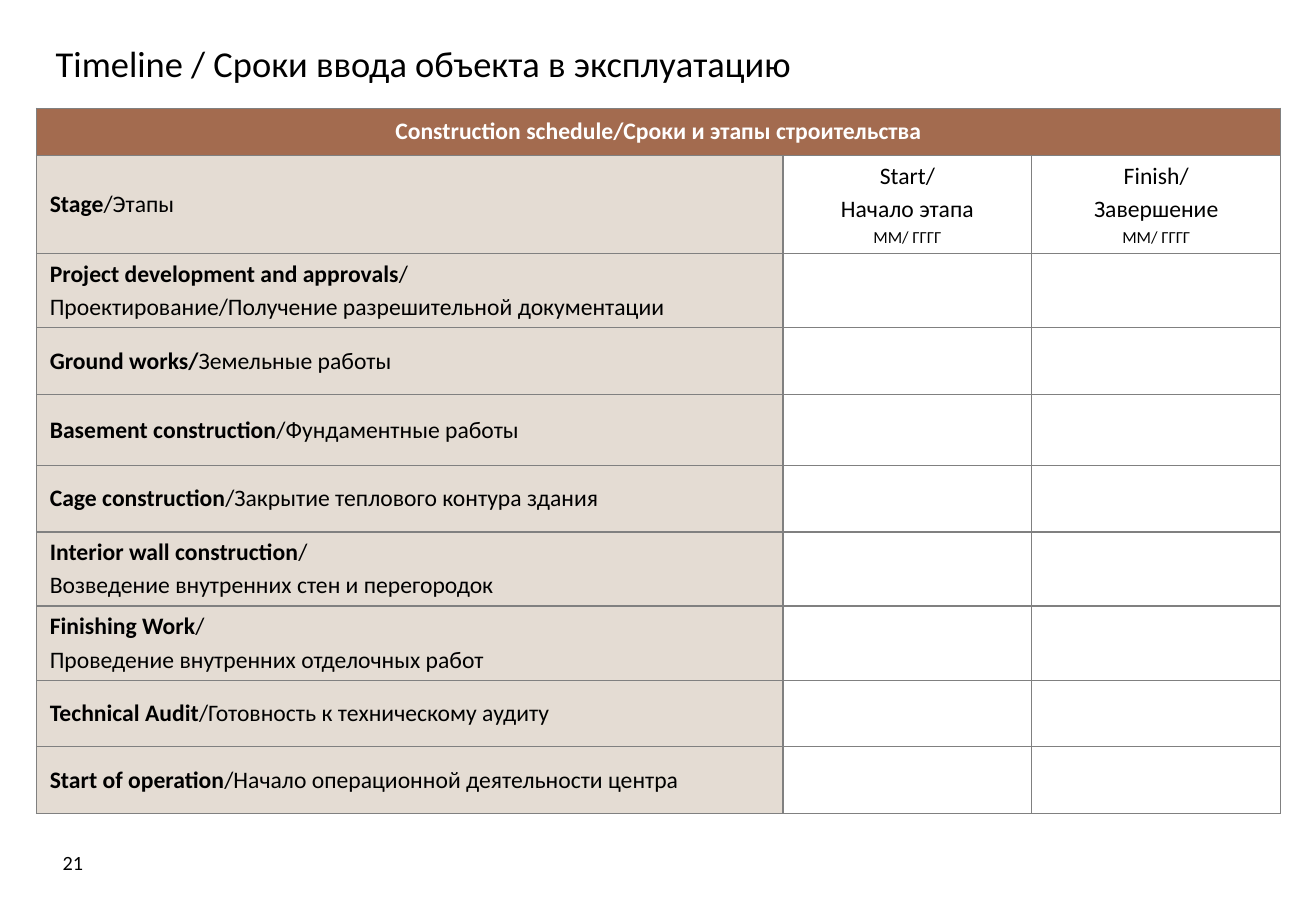
from lxml import etree
from pptx import Presentation
from pptx.dml.color import RGBColor
from pptx.enum.text import MSO_ANCHOR, PP_ALIGN
from pptx.oxml.ns import qn
from pptx.util import Inches, Pt

LEFT, CENTER = PP_ALIGN.LEFT, PP_ALIGN.CENTER
MIDDLE = MSO_ANCHOR.MIDDLE

# Content
FONT = "Calibri"
BLACK, WHITE, BROWN, BEIGE, GREY = "000000", "FFFFFF", "A36B4F", "E4DCD3", "808080"
TITLE = "Timeline / Сроки ввода объекта в эксплуатацию"
PAGE_NUMBER = "21"
SCHEDULE = "Construction schedule/Сроки и этапы строительства"
DATE_FORMAT = "ММ/ ГГГГ"
DATE_HEADINGS = [("Start/", "Начало этапа"), ("Finish/", "Завершение")]
# Bold part, rest of the line, second line, row height
STAGES = [
    ("Stage", "/Этапы", "", 0.81),
    ("Project development and approvals", "/",
     "Проектирование/Получение разрешительной документации", 0.61),
    ("Ground works/", "Земельные работы", "", 0.55),
    ("Basement construction", "/Фундаментные работы", "", 0.58),
    ("Cage construction", "/Закрытие теплового контура здания", "", 0.55),
    ("Interior wall construction", "/", "Возведение внутренних стен и перегородок", 0.61),
    ("Finishing Work", "/", "Проведение внутренних отделочных работ", 0.61),
    ("Technical Audit", "/Готовность к техническому аудиту", "", 0.55),
    ("Start of operation", "/Начало операционной деятельности центра", "", 0.55),
]

# Layout in inches
WIDTH, HEIGHT = 10.83, 7.5
TABLE_LEFT, TABLE_TOP, TABLE_WIDTH = 0.3, 0.89, 10.24
HEADER_HEIGHT = 0.39
COLUMN_SHARES = (0.6, 0.2, 0.2)


def color(hex_code):
    return RGBColor.from_string(hex_code)


def write(frame, paragraphs, align=LEFT, ink=BLACK):
    """Each paragraph is a list of (text, size, bold) runs."""
    for index, runs in enumerate(paragraphs):
        paragraph = frame.add_paragraph() if index else frame.paragraphs[0]
        paragraph.alignment = align
        for text, size, bold in runs:
            run = paragraph.add_run()
            run.text = text
            run.font.name, run.font.size, run.font.bold = FONT, Pt(size), bold
            run.font.color.rgb = color(ink)
        if index:
            paragraph.space_before = Pt(runs[0][1] * 0.2)


def add_text(slide, box, text, size, align):
    frame = slide.shapes.add_textbox(*map(Inches, box)).text_frame
    frame.word_wrap = True
    frame.vertical_anchor = MIDDLE
    write(frame, [[(text, size, False)]], align)


def style_cell(cell, fill):
    cell.vertical_anchor = MIDDLE
    cell.margin_left = cell.margin_right = Inches(0.11)
    cell.margin_top = cell.margin_bottom = Inches(0.05)
    properties = cell._tc.get_or_add_tcPr()
    for side in ("a:lnL", "a:lnR", "a:lnT", "a:lnB"):
        line = etree.SubElement(properties, qn(side), w=str(Pt(0.75)))
        solid = etree.SubElement(line, qn("a:solidFill"))
        etree.SubElement(solid, qn("a:srgbClr"), val=GREY)
    if fill:
        cell.fill.solid()
        cell.fill.fore_color.rgb = color(fill)
    else:
        cell.fill.background()


def add_schedule(slide):
    heights = [HEADER_HEIGHT] + [stage[-1] for stage in STAGES]
    box = (TABLE_LEFT, TABLE_TOP, TABLE_WIDTH, sum(heights))
    table = slide.shapes.add_table(
        len(heights), len(COLUMN_SHARES), *map(Inches, box)).table
    table.first_row = table.horz_banding = False
    for column, share in zip(table.columns, COLUMN_SHARES):
        column.width = Inches(TABLE_WIDTH * share)
    for r, height in enumerate(heights):
        table.rows[r].height = Inches(height)
        for c in range(len(COLUMN_SHARES)):
            fill = BROWN if r == 0 else BEIGE if c == 0 else None
            style_cell(table.cell(r, c), fill)

    # Header across all columns
    header = table.cell(0, 0)
    header.merge(table.cell(0, len(COLUMN_SHARES) - 1))
    write(header.text_frame, [[(SCHEDULE, 14, True)]], CENTER, WHITE)

    # Date headings
    for c, lines in enumerate(DATE_HEADINGS, 1):
        paragraphs = [[(line, 14, False)] for line in lines]
        paragraphs.append([(DATE_FORMAT, 10, False)])
        write(table.cell(1, c).text_frame, paragraphs, CENTER)

    # Stage names
    for r, (english, rest, second_line, _) in enumerate(STAGES, 1):
        paragraphs = [[(english, 14, True), (rest, 14, False)]]
        if second_line:
            paragraphs.append([(second_line, 14, False)])
        write(table.cell(r, 0).text_frame, paragraphs)


def main():
    deck = Presentation()
    deck.slide_width, deck.slide_height = Inches(WIDTH), Inches(HEIGHT)
    slide = deck.slides.add_slide(deck.slide_layouts[6])
    add_text(slide, (0.36, 0.29, 10.01, 0.46), TITLE, 21.6, LEFT)
    add_text(slide, (0.3, 6.9, 0.6, 0.4), PAGE_NUMBER, 12, CENTER)
    add_schedule(slide)
    deck.save("out.pptx")


if __name__ == "__main__":
    main()
